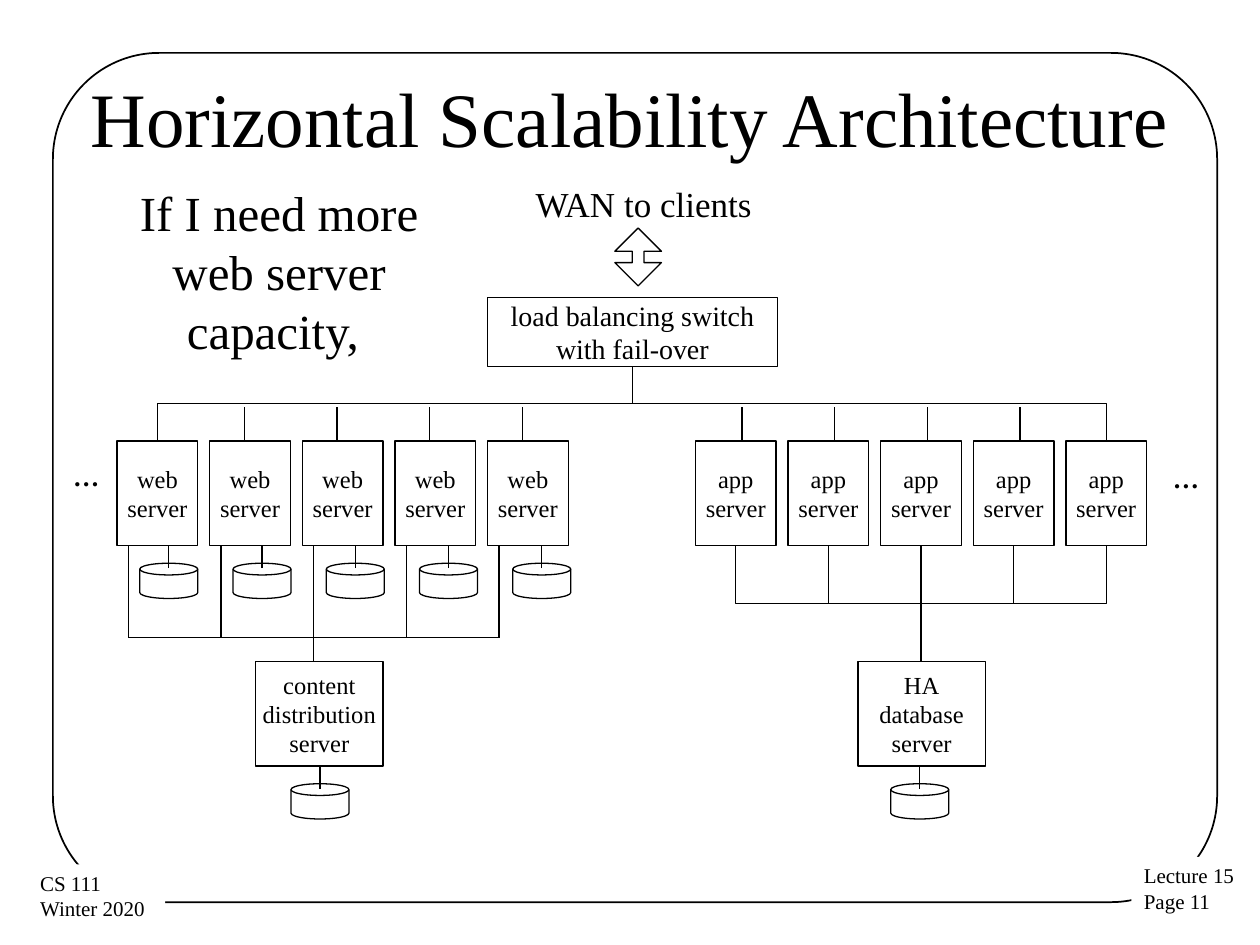
from dataclasses import dataclass

import pptx
import pptx.dml.color
import pptx.enum.shapes
import pptx.enum.text
import pptx.oxml
import pptx.oxml.ns
import pptx.util
from pptx.util import Inches

SHAPES = pptx.enum.shapes.MSO_SHAPE
CONNECTORS = pptx.enum.shapes.MSO_CONNECTOR
ALIGN = pptx.enum.text.PP_ALIGN
ANCHOR = pptx.enum.text.MSO_ANCHOR


@dataclass(frozen=True)
class Theme:
    font: str = "Times New Roman"
    ink: pptx.dml.color.RGBColor = pptx.dml.color.RGBColor(0, 0, 0)
    paper: pptx.dml.color.RGBColor = pptx.dml.color.RGBColor(255, 255, 255)
    title: int = 44
    remark: int = 28
    wan: int = 20
    switch: int = 16
    ellipsis: int = 15
    server: int = 14
    footer: int = 12
    line: float = 0.75
    frame: float = 1


THEME = Theme()
SERVER_COUNT = 5
SERVER_PITCH = 0.735
DISK_PITCH = 0.74
SERVER_WIDTH, SERVER_HEIGHT = 0.64, 0.83
SERVER_TOP = 3.5
SERVER_BOTTOM = SERVER_TOP + SERVER_HEIGHT
WEB_LEFT, APP_LEFT = 0.93, 5.52
BACKEND_TOP = 5.25
BACKEND_BOTTOM = BACKEND_TOP + SERVER_HEIGHT
SWITCH_X, SWITCH_BOTTOM = 5.02, 2.91
CONTENT_BUS_Y = 5.06
DATABASE_X = 7.31


def steps(first, count=SERVER_COUNT, pitch=SERVER_PITCH):
    return [first + index * pitch for index in range(count)]


def write_text(shape, lines, size, align=ALIGN.LEFT, anchor=ANCHOR.TOP,
               bold=False, wrap=False, insets=(0.11, 0.06)):
    frame = shape.text_frame
    frame.word_wrap = wrap
    frame.vertical_anchor = anchor
    frame.margin_left = frame.margin_right = Inches(insets[0])
    frame.margin_top = frame.margin_bottom = Inches(insets[1])
    for index, line in enumerate(lines):
        paragraph = frame.add_paragraph() if index else frame.paragraphs[0]
        paragraph.alignment = align
        run = paragraph.add_run()
        run.text = line
        run.font.name = THEME.font
        run.font.size = pptx.util.Pt(size)
        run.font.bold = bold
        run.font.color.rgb = THEME.ink


def add_text(slide, left, top, width, height, lines, size, **options):
    box = slide.shapes.add_textbox(Inches(left), Inches(top), Inches(width), Inches(height))
    write_text(box, lines, size, **options)
    return box


def add_outline(slide, kind, left, top, width, height, weight=THEME.line):
    shape = slide.shapes.add_shape(kind, Inches(left), Inches(top), Inches(width), Inches(height))
    shape.shadow.inherit = False
    shape.fill.background()
    shape.line.color.rgb = THEME.ink
    shape.line.width = pptx.util.Pt(weight)
    return shape


def add_box(slide, left, top, width, height, lines, size=THEME.server):
    box = add_outline(slide, SHAPES.RECTANGLE, left, top, width, height)
    write_text(box, lines, size, align=ALIGN.CENTER, anchor=ANCHOR.MIDDLE)


def add_line(slide, x1, y1, x2, y2, kind=CONNECTORS.STRAIGHT):
    line = slide.shapes.add_connector(kind, Inches(x1), Inches(y1), Inches(x2), Inches(y2))
    line.line.color.rgb = THEME.ink
    line.line.width = pptx.util.Pt(THEME.line)
    properties = line._element.spPr
    properties.append(pptx.oxml.parse_xml(
        f"<a:effectLst {pptx.oxml.ns.nsdecls('a')}/>"))
    return line


def add_vertical_elbow(slide, x1, y1, x2, y2):
    """Join two points by a connector that leaves and arrives vertically."""
    (left_x, left_y), (right_x, right_y) = sorted([(x1, y1), (x2, y2)])
    length, spread = abs(y2 - y1), right_x - left_x
    left = (x1 + x2 - length) / 2
    top = (y1 + y2 - spread) / 2
    elbow = add_line(slide, left, top, left + length, top + spread, CONNECTORS.ELBOW)
    transform = elbow._element.spPr.xfrm
    transform.set("rot", str(90 * 60000))
    if right_y > left_y:
        transform.set("flipH", "1")


def add_disk(slide, left, server_bottom):
    add_outline(slide, SHAPES.FLOWCHART_MAGNETIC_DISK, left, server_bottom + 0.14, 0.46, 0.28)
    middle = left + 0.23
    add_line(slide, middle, server_bottom + 0.18, middle, server_bottom)


def add_frame_and_footers(slide):
    frame = add_outline(slide, SHAPES.ROUNDED_RECTANGLE, 0.42, 0.42, 9.24, 6.74, THEME.frame)
    frame.adjustments[0] = 0.125
    for left, top, width, lines in (
        (8.98, 6.8, 0.93, ["Lecture 15", "Page 11"]),
        (0.22, 6.86, 1.09, ["CS 111", "Winter 2020"]),
    ):
        footer = add_text(slide, left, top, width, 0.51, lines, THEME.footer, insets=(0.1, 0.05))
        footer.fill.solid()
        footer.fill.fore_color.rgb = THEME.paper


def add_entry(slide):
    """Draw the clients' link and the switch that feeds both server rows."""
    add_text(slide, 4.14, 1.39, 1.95, 0.45, ["WAN to clients"], THEME.wan)
    arrow = add_outline(slide, SHAPES.UP_DOWN_ARROW, 4.88, 1.81, 0.37, 0.46)
    arrow.adjustments[0], arrow.adjustments[1] = 0.5, 0.25
    add_box(slide, 3.87, 2.36, 2.3, 0.55,
            ["load balancing switch", "with fail-over"], THEME.switch)
    for x in (1.25, 8.78):
        add_vertical_elbow(slide, SWITCH_X, SWITCH_BOTTOM, x, SERVER_TOP)
    for x in steps(1.94, SERVER_COUNT - 1) + steps(5.89, SERVER_COUNT - 1):
        add_line(slide, x, SERVER_TOP, x, 3.23)


def add_server_row(slide, first_left, name):
    for left in steps(first_left):
        add_box(slide, left, SERVER_TOP, SERVER_WIDTH, SERVER_HEIGHT, [name, "server"])


def add_web_side(slide):
    add_server_row(slide, WEB_LEFT, "web")
    for left in steps(1.11, pitch=DISK_PITCH):
        add_disk(slide, left, SERVER_BOTTOM)
    feeds = steps(1.02)
    for x in feeds:
        add_line(slide, x, CONTENT_BUS_Y, x, SERVER_BOTTOM)
    add_line(slide, feeds[0], CONTENT_BUS_Y, feeds[-1], CONTENT_BUS_Y)
    add_line(slide, feeds[2], BACKEND_TOP, feeds[2], CONTENT_BUS_Y)
    add_box(slide, 2.03, BACKEND_TOP, 1.01, SERVER_HEIGHT,
            ["content", "distribution", "server"])
    add_disk(slide, 2.31, BACKEND_BOTTOM)
    add_text(slide, 0.47, 3.59, 0.44, 0.37, ["…"], THEME.ellipsis, bold=True)


def add_app_side(slide):
    add_server_row(slide, APP_LEFT, "app")
    for offset in (-2, -1, 1, 2):
        add_vertical_elbow(slide, DATABASE_X, BACKEND_TOP,
                           DATABASE_X + offset * SERVER_PITCH, SERVER_BOTTOM)
    add_line(slide, DATABASE_X, BACKEND_TOP, DATABASE_X, SERVER_BOTTOM)
    add_box(slide, 6.81, BACKEND_TOP, 1.01, SERVER_HEIGHT, ["HA", "database", "server"])
    add_disk(slide, 7.07, BACKEND_BOTTOM)
    add_text(slide, 9.2, 3.61, 0.44, 0.37, ["…"], THEME.ellipsis, bold=True)


def main():
    presentation = pptx.Presentation()
    presentation.slide_width, presentation.slide_height = Inches(10), Inches(7.5)
    slide = presentation.slides.add_slide(presentation.slide_layouts[6])
    add_frame_and_footers(slide)
    add_text(slide, 0.5, 0.3, 9, 1.25, ["Horizontal Scalability Architecture"], THEME.title,
             align=ALIGN.CENTER, anchor=ANCHOR.MIDDLE, wrap=True, insets=(0.1, 0.05))
    add_entry(slide)
    add_web_side(slide)
    add_app_side(slide)
    add_text(slide, 0.78, 1.4, 2.87, 1.51, ["If I need more web server capacity, "],
             THEME.remark, align=ALIGN.CENTER, wrap=True, insets=(0.1, 0.05))
    presentation.save("out.pptx")


if __name__ == "__main__":
    main()
